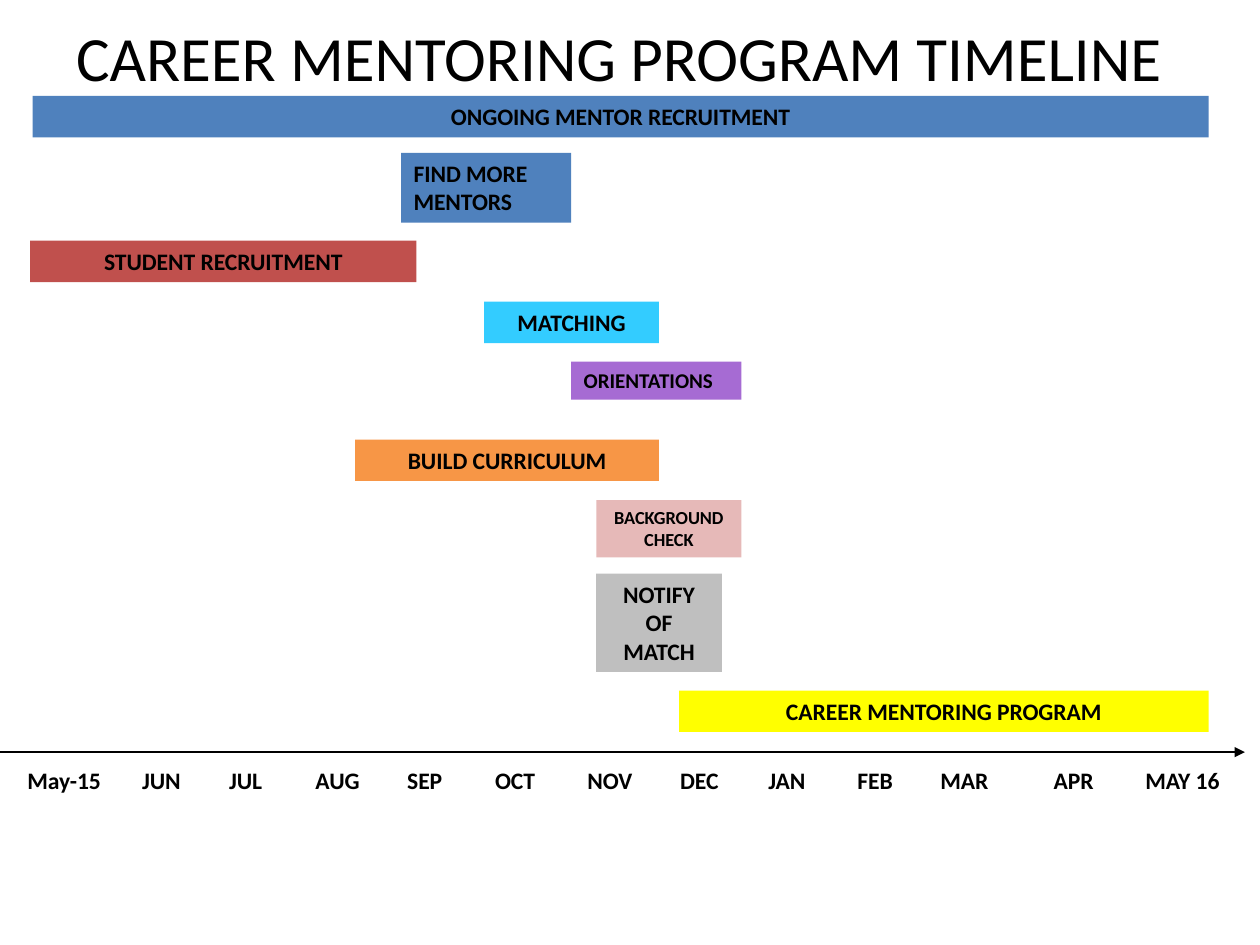
from lxml import etree
from pptx import Presentation
from pptx.dml.color import RGBColor
from pptx.enum.shapes import MSO_CONNECTOR, MSO_SHAPE
from pptx.enum.text import MSO_ANCHOR, MSO_AUTO_SIZE, PP_ALIGN
from pptx.oxml.ns import qn
from pptx.util import Pt

LEFT, CENTER = PP_ALIGN.LEFT, PP_ALIGN.CENTER
TOP = MSO_ANCHOR.TOP
GROW = MSO_AUTO_SIZE.SHAPE_TO_FIT_TEXT
RECTANGLE = MSO_SHAPE.RECTANGLE
STRAIGHT = MSO_CONNECTOR.STRAIGHT

COLORS = {
    "ink": "000000",
    "mentors": "4F81BD",
    "students": "C0504D",
    "matching": "33CCFF",
    "orientation": "A66BD3",
    "curriculum": "F79646",
    "check": "E6B9B8",
    "notify": "BFBFBF",
    "program": "FFFF00",
}

# Task, colour, left, top, width, height (within the chart box), text format
TASKS = [
    ("ONGOING MENTOR RECRUITMENT", "mentors", 1.4, 0, 672, 23.7, {}),
    ("FIND MORE MENTORS", "mentors", 212, 32.5, 97.2, 40, {"align": LEFT}),
    ("STUDENT RECRUITMENT", "students", 0, 82.8, 220.8, 23.7, {}),
    ("MATCHING", "matching", 259.4, 117.6, 100, 23.7, {}),
    ("ORIENTATIONS", "orientation", 309.2, 151.8, 97.2, 21.8,
     {"size": 12, "align": LEFT}),
    ("BUILD CURRICULUM", "curriculum", 185.8, 196.4, 173.6, 23.7, {}),
    ("BACKGROUND CHECK", "check", 323.6, 231, 82.8, 32.7, {"size": 10.5}),
    ("NOTIFY OF MATCH", "notify", 323.4, 273, 72, 56.2, {}),
    ("CAREER MENTORING PROGRAM", "program", 370.8, 339.8, 302.6, 23.7, {}),
]

# Month and its tab position along the axis labels
MONTHS = [
    ("May-15", 0), ("JUN", 65.5), ("JUL", 115.2), ("AUG", 164.6),
    ("SEP", 217), ("OCT", 267.2), ("NOV", 320), ("DEC", 373),
    ("JAN", 423.4), ("FEB", 474.2), ("MAR", 521.7), ("APR", 586.4),
    ("MAY 16", 638.8),
]


def color(name):
    return RGBColor.from_string(COLORS[name])


def write(shape, text, size=13.5, bold=True, align=CENTER, tabs=()):
    frame = shape.text_frame
    frame.word_wrap = True
    frame.auto_size = GROW
    frame.vertical_anchor = TOP
    para = frame.paragraphs[0]
    para.alignment = align
    if tabs:
        tab_list = etree.SubElement(para._p.get_or_add_pPr(), qn("a:tabLst"))
        for position in tabs:
            etree.SubElement(tab_list, qn("a:tab"), pos=str(Pt(position)), algn="l")
    span = para.add_run()
    span.text = text
    span.font.name = "Calibri"
    span.font.size = Pt(size)
    span.font.bold = bold
    span.font.color.rgb = color("ink")


def add_title(page, left, top, width, height):
    box = page.shapes.add_textbox(Pt(left), Pt(top), Pt(width), Pt(height))
    write(box, "CAREER MENTORING PROGRAM TIMELINE", size=36, bold=False)


def add_tasks(page, left, top):
    for text, fill, x, y, width, height, text_format in TASKS:
        bar = page.shapes.add_shape(
            RECTANGLE, Pt(left + x), Pt(top + y), Pt(width), Pt(height))
        bar.shadow.inherit = False
        bar.fill.solid()
        bar.fill.fore_color.rgb = color(fill)
        bar.line.fill.background()
        write(bar, text, **text_format)


def add_axis(page, left, top, width):
    # Time arrow
    arrow = page.shapes.add_connector(
        STRAIGHT, Pt(left), Pt(top), Pt(left + width), Pt(top))
    arrow.line.color.rgb = color("ink")
    arrow.line.width = Pt(0.75)
    etree.SubElement(arrow.line._get_or_add_ln(), qn("a:tailEnd"), type="triangle")
    etree.SubElement(arrow._element.spPr, qn("a:effectLst"))

    # Month labels, set on tab stops
    labels = page.shapes.add_textbox(
        Pt(left + 8.6), Pt(top + 4.3), Pt(width), Pt(23.7))
    names, positions = zip(*MONTHS)
    write(labels, "\t".join(names), align=LEFT, tabs=positions[1:])


def main():
    deck = Presentation()
    deck.slide_width, deck.slide_height = Pt(720), Pt(540)
    page = deck.slides.add_slide(deck.slide_layouts[6])
    add_axis(page, 0, 429.8, 711.4)
    add_tasks(page, 17.2, 54.8)
    add_title(page, 17.2, 7.2, 673.2, 51)
    deck.save("out.pptx")


if __name__ == "__main__":
    main()
